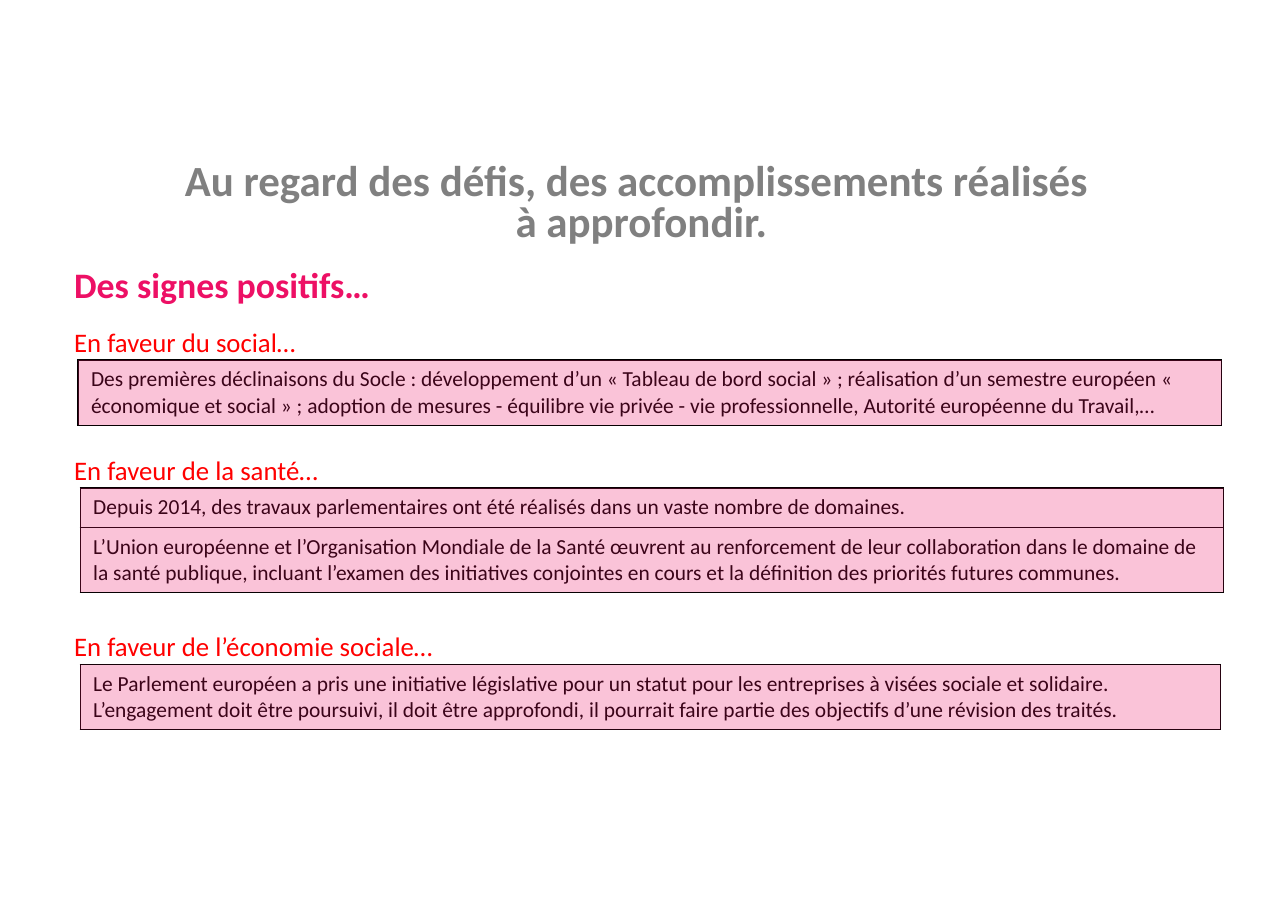
import dataclasses

import lxml.etree
import pptx
import pptx.dml.color
import pptx.enum.shapes
import pptx.enum.text
import pptx.oxml.ns
import pptx.util

Cm = pptx.util.Cm
Pt = pptx.util.Pt
Align = pptx.enum.text.PP_ALIGN


@dataclasses.dataclass(frozen=True)
class Theme:
    """Colours, type sizes and the font of the deck."""
    font: str = "Calibri"
    grey: str = "808080"
    pink: str = "ED1065"
    red: str = "FF0000"
    black: str = "000000"
    title: float = 28.1
    subtitle: float = 23.4
    heading: float = 17.5
    body: float = 14
    veil_alpha: int = 25
    border: float = 1


@dataclasses.dataclass(frozen=True)
class Box:
    """A rectangle in centimetres."""
    left: float
    top: float
    width: float
    height: float

    def lengths(self):
        """Return the four lengths in slide units."""
        return [Cm(value) for value in dataclasses.astuple(self)]


THEME = Theme()
HEADING_LEFT = 1.71
HEADING_HEIGHT = 0.8
LINE_HEIGHT = 0.6
CELL_FRAME = {"margin_left": Cm(0.3), "margin_right": Cm(0.3),
              "margin_top": Cm(0.15), "margin_bottom": Cm(0.15)}
PLAIN_FRAME = {"word_wrap": True, "auto_size": pptx.enum.text.MSO_AUTO_SIZE.NONE,
               "vertical_anchor": pptx.enum.text.MSO_ANCHOR.TOP,
               "margin_left": 0, "margin_right": 0, "margin_top": 0, "margin_bottom": 0}

TITLE = ["Au regard des défis, des accomplissements réalisés ", "à approfondir."]
SECTIONS = [
    ("En faveur du social…", Box(1.8, 8.3, 26.37, 1.5), [
        (2, ["Des premières déclinaisons du Socle : développement d’un « Tableau de bord social » ; "
             "réalisation d’un semestre européen « économique et social » ; adoption de mesures - "
             "équilibre vie privée - vie professionnelle, Autorité européenne du Travail,…"])]),
    ("En faveur de la santé…", Box(1.85, 11.25, 26.37, 2.4), [
        (1, ["Depuis 2014, des travaux parlementaires ont été réalisés dans un vaste nombre de domaines."]),
        (2, ["L’Union européenne et l’Organisation Mondiale de la Santé œuvrent au renforcement de leur "
             "collaboration dans le domaine de la santé publique, incluant l’examen des initiatives "
             "conjointes en cours et la définition des priorités futures communes."])]),
    ("En faveur de l’économie sociale…", Box(1.85, 15.32, 26.3, 1.5), [
        (2, ["Le Parlement européen a pris une initiative législative pour un statut pour les entreprises "
             "à visées sociale et solidaire.",
             "L’engagement doit être poursuivi, il doit être approfondi, il pourrait faire partie des "
             "objectifs d’une révision des traités."])]),
]


def apply(target, values):
    """Set each attribute of the target from a dict of values."""
    for name, value in values.items():
        setattr(target, name, value)


def write(frame, lines, size, colour, bold=False, **layout):
    """Fill a text frame with one formatted paragraph per line."""
    for index, line in enumerate(lines):
        para = frame.add_paragraph() if index else frame.paragraphs[0]
        apply(para, {"alignment": Align.LEFT, "space_before": Pt(0), **layout})
        span = para.add_run()
        span.text = line
        apply(span.font, {"name": THEME.font, "size": Pt(size), "bold": bold})
        span.font.color.rgb = pptx.dml.color.RGBColor.from_string(colour)


def add_title(page, box):
    """Place and format the title placeholder."""
    title = page.shapes.title
    apply(title, dict(zip(("left", "top", "width", "height"), box.lengths())))
    apply(title.text_frame, PLAIN_FRAME)
    write(title.text_frame, TITLE, THEME.title, THEME.grey, True,
          alignment=Align.CENTER, line_spacing=0.8)


def add_label(page, box, text, size, colour, bold=False):
    """Add a one-line label."""
    frame = page.shapes.add_textbox(*box.lengths()).text_frame
    apply(frame, PLAIN_FRAME)
    write(frame, [text], size, colour, bold)


def add_borders(cell):
    """Draw a thin line on the four sides of a cell."""
    properties = cell._tc.get_or_add_tcPr()
    for index, side in enumerate(("lnL", "lnR", "lnT", "lnB")):
        line = lxml.etree.Element(pptx.oxml.ns.qn(f"a:{side}"), w=str(Pt(THEME.border)))
        fill = lxml.etree.SubElement(line, pptx.oxml.ns.qn("a:solidFill"))
        lxml.etree.SubElement(fill, pptx.oxml.ns.qn("a:srgbClr"), val=THEME.black)
        properties.insert(index, line)


def add_statements(page, box, rows):
    """Add a one-column table of statements."""
    table = page.shapes.add_table(len(rows), 1, *box.lengths()).table
    apply(table, {"first_row": False, "horz_banding": False})
    for index, (line_count, lines) in enumerate(rows):
        table.rows[index].height = Cm(0.3 + LINE_HEIGHT * line_count)
        cell = table.cell(index, 0)
        apply(cell, CELL_FRAME)
        cell.fill.background()
        add_borders(cell)
        write(cell.text_frame, lines, THEME.body, THEME.black)


def add_veil(page, box):
    """Lay a translucent pink rectangle over a box."""
    veil = page.shapes.add_shape(pptx.enum.shapes.MSO_SHAPE.RECTANGLE, *box.lengths())
    veil.shadow.inherit = False
    veil.line.fill.background()
    veil.fill.solid()
    veil.fill.fore_color.rgb = pptx.dml.color.RGBColor.from_string(THEME.pink)
    colour = veil.fill._xPr.find(".//" + pptx.oxml.ns.qn("a:srgbClr"))
    lxml.etree.SubElement(colour, pptx.oxml.ns.qn("a:alpha"), val=str(THEME.veil_alpha * 1000))


def add_section(page, box, heading, rows):
    """Add a heading above its veiled table of statements."""
    label = Box(HEADING_LEFT, box.top - HEADING_HEIGHT, box.width, HEADING_HEIGHT)
    add_label(page, label, heading, THEME.heading, THEME.red)
    add_statements(page, box, rows)
    add_veil(page, box)


def main():
    """Build and save the deck."""
    deck = pptx.Presentation()
    apply(deck, {"slide_width": Cm(29.7), "slide_height": Cm(21)})
    page = deck.slides.add_slide(deck.slide_layouts[5])
    add_title(page, Box(1.44, 3.76, 26.7, 1.94))
    add_label(page, Box(HEADING_LEFT, 6.05, 26.4, 1), "Des signes positifs…",
              THEME.subtitle, THEME.pink, True)
    for heading, box, rows in SECTIONS:
        add_section(page, box, heading, rows)
    deck.save("out.pptx")


if __name__ == "__main__":
    main()
